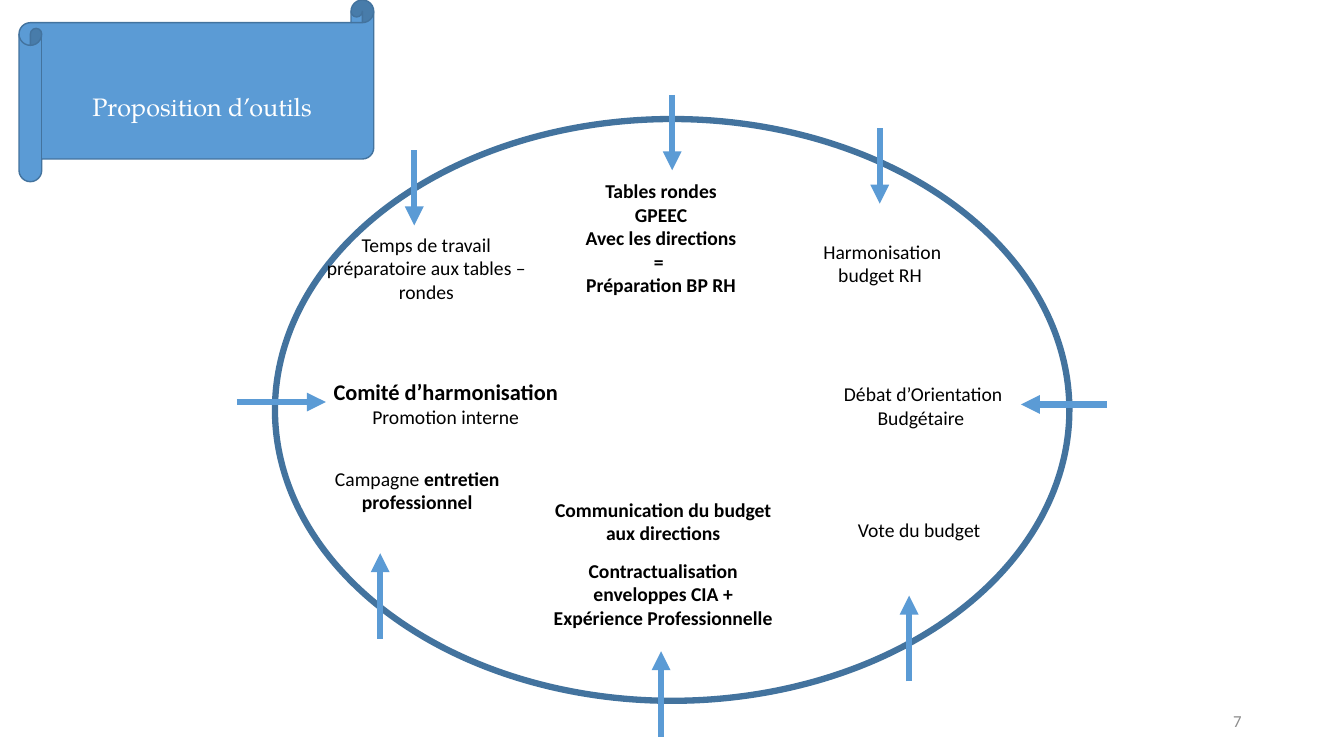
from dataclasses import dataclass

from lxml import etree
from pptx import Presentation
from pptx.dml.color import RGBColor
from pptx.enum.shapes import MSO_CONNECTOR, MSO_SHAPE
from pptx.enum.text import MSO_ANCHOR, PP_ALIGN
from pptx.oxml.ns import qn
from pptx.util import Cm, Pt

BLUE = RGBColor(0x5B, 0x9B, 0xD5)
DARK_BLUE = RGBColor(0x43, 0x73, 0x9E)
BLACK = RGBColor(0, 0, 0)
WHITE = RGBColor(0xFF, 0xFF, 0xFF)
GREY = RGBColor(0x8C, 0x8C, 0x8C)

STRAIGHT = MSO_CONNECTOR.STRAIGHT
ELLIPSE = MSO_SHAPE.OVAL
SCROLL = MSO_SHAPE.HORIZONTAL_SCROLL
CENTER, RIGHT = PP_ALIGN.CENTER, PP_ALIGN.RIGHT
TOP, MIDDLE = MSO_ANCHOR.TOP, MSO_ANCHOR.MIDDLE


@dataclass
class Line:
    """One paragraph; bold_tail is a bold ending after the text."""
    text: str
    size: float = 14
    bold: bool = False
    bold_tail: str = ""
    space_before: float = 0


class ToolsSlide:
    BODY_FONT = "Calibri"
    TITLE_FONT = "TeX Gyre Pagella"
    THICK = Pt(4.5)

    def __init__(self, presentation):
        self.slide = presentation.slides.add_slide(presentation.slide_layouts[6])

    def fill_frame(self, frame, lines, font=BODY_FONT, color=BLACK,
                   align=CENTER, anchor=TOP):
        """Put the lines into a text frame, one paragraph each."""
        frame.word_wrap = True
        frame.vertical_anchor = anchor
        for index, line in enumerate(lines):
            paragraph = frame.paragraphs[0] if index == 0 else frame.add_paragraph()
            paragraph.alignment = align
            paragraph.space_before = Pt(line.space_before)
            paragraph.font.name = font
            paragraph.font.size = Pt(line.size)
            paragraph.font.bold = line.bold
            paragraph.font.color.rgb = color
            paragraph.add_run().text = line.text
            if line.bold_tail:
                tail = paragraph.add_run()
                tail.text = line.bold_tail
                tail.font.bold = True

    def text(self, left, top, width, height, *lines, **style):
        box = self.slide.shapes.add_textbox(Cm(left), Cm(top), Cm(width), Cm(height))
        self.fill_frame(box.text_frame, lines, **style)

    def shape(self, kind, left, top, width, height, line_width, fill=None):
        shape = self.slide.shapes.add_shape(
            kind, Cm(left), Cm(top), Cm(width), Cm(height))
        shape.shadow.inherit = False
        if fill is None:
            shape.fill.background()
        else:
            shape.fill.solid()
            shape.fill.fore_color.rgb = fill
        shape.line.color.rgb = DARK_BLUE
        shape.line.width = line_width
        return shape

    def arrow(self, x, y, dx, dy):
        """Arrow from (x, y), pointing along (dx, dy)."""
        arrow = self.slide.shapes.add_connector(
            STRAIGHT, Cm(x), Cm(y), Cm(x + dx), Cm(y + dy))
        arrow.line.color.rgb = BLUE
        arrow.line.width = self.THICK
        properties = arrow._element.spPr
        line = properties.find(qn("a:ln"))
        etree.SubElement(line, qn("a:tailEnd"), type="triangle")
        etree.SubElement(properties, qn("a:effectLst"))

    def title_scroll(self, title):
        scroll = self.shape(SCROLL, 0.48, 0, 8.94, 4.58, Pt(1), BLUE)
        scroll.text_frame.margin_top = Cm(0.9)
        self.fill_frame(scroll.text_frame, [Line(title, 18)],
                        font=self.TITLE_FONT, color=WHITE, anchor=MIDDLE)


def main():
    presentation = Presentation()
    presentation.slide_width = Cm(33.87)
    presentation.slide_height = Cm(19.05)
    page = ToolsSlide(presentation)

    page.text(23.92, 17.66, 7.62, 1.01, Line("7", 12),
              color=GREY, align=RIGHT, anchor=MIDDLE)
    page.shape(ELLIPSE, 6.93, 3, 20.02, 14.66, page.THICK)

    down, up = 1.9, -2.16
    for x, y, dx, dy in [
        (16.94, 2.39, 0, down),
        (10.44, 3.78, 0, down),
        (22.17, 3.23, 0, down),
        (22.91, 17.17, 0, up),
        (16.66, 18.57, 0, up),
        (9.58, 16.1, 0, up),
        (27.89, 10.19, -2.16, 0),
        (5.97, 10.13, 2.24, 0),
    ]:
        page.arrow(x, y, dx, dy)

    page.text(14.3, 4.39, 4.72, 3.25,
              Line("Tables rondes GPEEC", bold=True),
              Line("Avec les directions", bold=True),
              Line("= ", bold=True),
              Line("Préparation BP RH", bold=True))
    page.text(20.42, 5.91, 3.63, 1.45, Line("Harmonisation budget RH "))
    page.text(20.19, 9.5, 6.15, 1.45, Line("Débat d’Orientation Budgétaire "))
    page.text(20.09, 12.93, 6.15, 0.86, Line("Vote du budget"))
    page.text(13.59, 12.42, 6.25, 4.2,
              Line("Communication du budget aux directions", bold=True),
              Line("Contractualisation enveloppes CIA + Expérience Professionnelle",
                   bold=True, space_before=9.8))
    page.text(7.44, 11.63, 6.15, 1.45,
              Line("Campagne ", bold_tail="entretien professionnel"))
    page.text(7.44, 9.4, 7.59, 1.55,
              Line("Comité d’harmonisation", 16, bold=True),
              Line("Promotion interne"))
    page.text(7.67, 5.74, 6.15, 2.06,
              Line("Temps de travail préparatoire aux tables –rondes"))

    page.title_scroll("Proposition d’outils")
    presentation.save("out.pptx")


if __name__ == "__main__":
    main()
